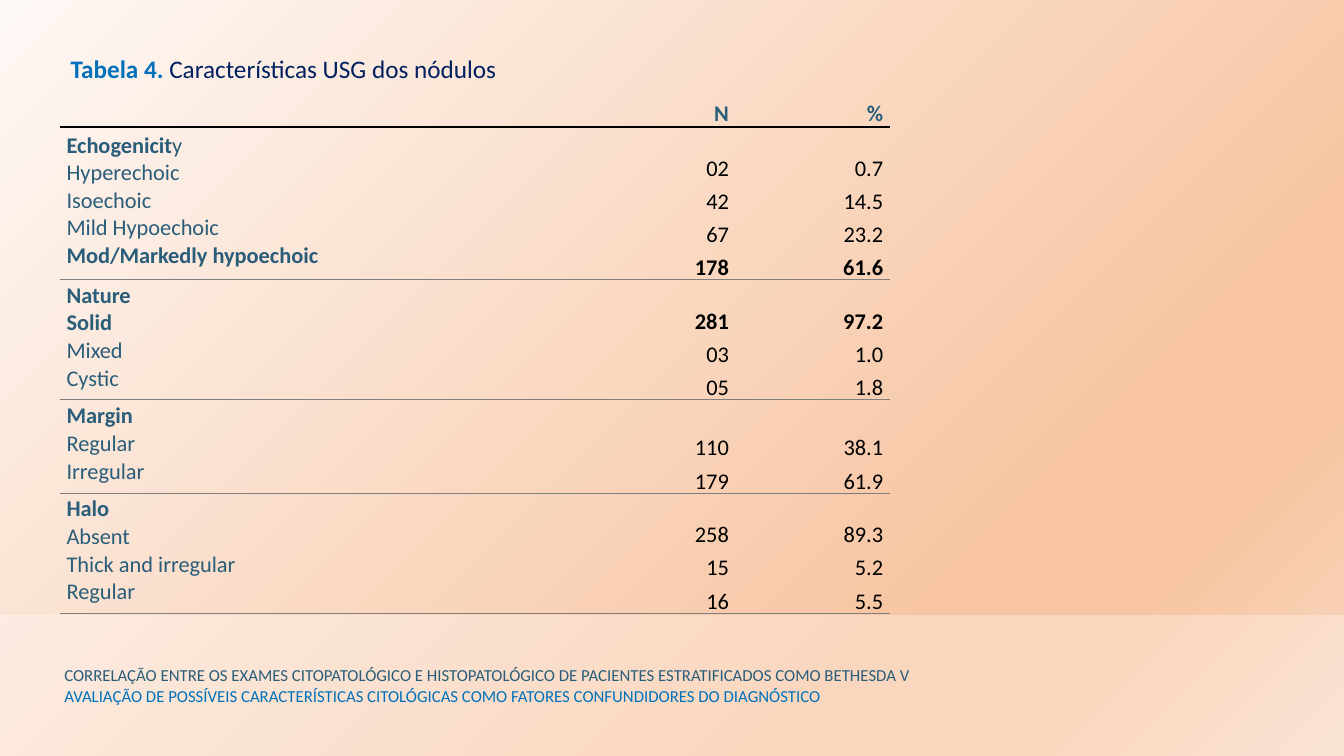
from dataclasses import dataclass
from lxml.etree import SubElement
from pptx import Presentation
from pptx.dml.color import RGBColor
from pptx.enum.shapes import MSO_SHAPE
from pptx.enum.text import MSO_ANCHOR, MSO_AUTO_SIZE, PP_ALIGN
from pptx.oxml.ns import qn
from pptx.util import Inches, Pt


@dataclass(frozen=True)
class Theme:
    face: str = "Calibri"
    teal: str = "295D7A"
    blue: str = "0071BA"
    navy: str = "002060"
    black: str = "000000"
    white: str = "FFFFFF"
    gray: str = "7F7F7F"
    glow: tuple = ((0, "FEF8F5"), (74, "F7C5A2"), (83, "F7C5A2"), (100, "FAD8C1"))
    head: int = 18
    cell: int = 16
    foot: int = 12


@dataclass(frozen=True)
class Run:
    text: str
    color: str
    bold: bool = False


@dataclass(frozen=True)
class Item:
    label: str
    count: str
    share: str
    bold: bool = False


@dataclass(frozen=True)
class Group:
    name: str
    high: float
    items: tuple
    tail: str = ""


THEME = Theme()
WIDE, HIGH = Inches(13.33), Inches(7.5)
COLS = (34.73, 15.6, 11.48)
TOP = 3.6
GROUPS = (
    Group("Echogenicit", 20.2, (
        Item("Hyperechoic", "02", "0.7"),
        Item("Isoechoic", "42", "14.5"),
        Item("Mild Hypoechoic", "67", "23.2"),
        Item("Mod/Markedly hypoechoic", "178", "61.6", True)), "y"),
    Group("Nature", 15.87, (
        Item("Solid", "281", "97.2", True),
        Item("Mixed", "03", "1.0"),
        Item("Cystic", "05", "1.8"))),
    Group("Margin", 12.4, (
        Item("Regular", "110", "38.1"),
        Item("Irregular", "179", "61.9"))),
    Group("Halo", 15.87, (
        Item("Absent", "258", "89.3"),
        Item("Thick and irregular", "15", "5.2"),
        Item("Regular", "16", "5.5"))),
)


def across(share: float) -> int:
    return round(WIDE * share / 100)


def down(share: float) -> int:
    return round(HIGH * share / 100)


def area(left: float, top: float, wide: float, high: float) -> tuple:
    return across(left), down(top), across(wide), down(high)


def write(frame, lines: list, size: int, align=PP_ALIGN.LEFT, pitch=None, gap=0) -> None:
    for spot, runs in enumerate(lines):
        par = frame.paragraphs[0] if spot == 0 else frame.add_paragraph()
        par.alignment = align
        if pitch:
            par.line_spacing = pitch
        par.space_before = Pt(gap if spot else 0)
        par.space_after = Pt(gap if spot < len(lines) - 1 else 0)
        par.font.name, par.font.size = THEME.face, Pt(size)
        for part in runs:
            run = par.add_run()
            run.text = part.text
            font = par.font if len(runs) == 1 else run.font
            font.bold = part.bold
            font.color.rgb = RGBColor.from_string(part.color)


def paint(slide) -> None:
    fill = slide.background.fill
    fill.gradient()
    fill.gradient_angle = 315
    stops = fill.gradient_stops[0]._gs.getparent()
    for stop in list(stops):
        stops.remove(stop)
    for place, color in THEME.glow:
        stop = SubElement(stops, qn("a:gs"), pos=str(place * 1000))
        SubElement(stop, qn("a:srgbClr"), val=color)


def band(slide) -> None:
    shape = slide.shapes.add_shape(MSO_SHAPE.RECTANGLE, *area(0, 81.33, 100, 18.67))
    shape.shadow.inherit = False
    shape.line.fill.background()
    shape.fill.solid()
    shape.fill.fore_color.rgb = RGBColor.from_string(THEME.white)
    tint = shape.fill._xPr.find(".//" + qn("a:srgbClr"))
    SubElement(tint, qn("a:alpha"), val="30000")


def rule(cell, side: str, color: str, width: float) -> None:
    line = SubElement(cell._tc.get_or_add_tcPr(), qn("a:" + side), w=str(Pt(width)))
    fill = SubElement(line, qn("a:solidFill"))
    SubElement(fill, qn("a:srgbClr"), val=color)


def edge(cell, row: int) -> None:
    dark, soft = (THEME.black, 1.5), (THEME.gray, 1)
    if row:
        rule(cell, "lnT", *(dark if row == 1 else soft))
    rule(cell, "lnB", *(soft if row else dark))
    cell.fill.background()
    cell.margin_left = cell.margin_right = Inches(0.07)
    cell.margin_top = cell.margin_bottom = 0


def names(cell, group: Group) -> None:
    head = [Run(group.name, THEME.teal, True)]
    if group.tail:
        head.append(Run(group.tail, THEME.teal))
    rest = [[Run(item.label, THEME.teal, item.bold)] for item in group.items]
    cell.vertical_anchor = MSO_ANCHOR.MIDDLE
    write(cell.text_frame, [head, *rest], THEME.cell, pitch=0.6, gap=4)


def counts(cell, group: Group, field: str) -> None:
    lines = [[Run(getattr(item, field), THEME.black, item.bold)] for item in group.items]
    cell.vertical_anchor = MSO_ANCHOR.BOTTOM
    write(cell.text_frame, lines, THEME.cell, PP_ALIGN.RIGHT, 0.8, 4)


def chart(slide) -> None:
    highs = (TOP, *(group.high for group in GROUPS))
    place = area(4.43, 13.2, sum(COLS), sum(highs))
    table = slide.shapes.add_table(len(highs), len(COLS), *place).table
    table.first_row = table.horz_banding = False
    style = table._tbl.tblPr.find(qn("a:tableStyleId"))
    style.text = "{2D5ABB26-0587-4C30-8999-92F81FD0307C}"
    for col, share in zip(table.columns, COLS):
        col.width = across(share)
    for row, share in enumerate(highs):
        table.rows[row].height = down(share)
        for cell in table.rows[row].cells:
            edge(cell, row)
    for col, text in enumerate(("N", "%"), 1):
        cell = table.cell(0, col)
        cell.vertical_anchor = MSO_ANCHOR.MIDDLE
        write(cell.text_frame, [[Run(text, THEME.teal, True)]], THEME.cell, PP_ALIGN.RIGHT)
    blank = table.cell(0, 0).text_frame.paragraphs[0]
    blank.font.size = Pt(THEME.foot)
    for row, group in enumerate(GROUPS, 1):
        names(table.cell(row, 0), group)
        counts(table.cell(row, 1), group, "count")
        counts(table.cell(row, 2), group, "share")


def title(slide) -> None:
    shape = slide.shapes.title
    shape.left, shape.top, shape.width, shape.height = area(4.5, 6.4, 82.52, 5.33)
    frame = shape.text_frame
    frame.word_wrap = True
    frame.auto_size = MSO_AUTO_SIZE.NONE
    frame.vertical_anchor = MSO_ANCHOR.MIDDLE
    runs = [Run("Tabela 4. ", THEME.blue, True), Run("Características USG dos nódulos", THEME.navy)]
    write(frame, [runs], THEME.head)


def footer(slide) -> None:
    frame = slide.shapes.add_textbox(*area(4.05, 87.33, 67.67, 6.67)).text_frame
    frame.word_wrap = True
    write(frame, [
        [Run("CORRELAÇÃO ENTRE OS EXAMES CITOPATOLÓGICO E HISTOPATOLÓGICO DE PACIENTES ESTRATIFICADOS COMO BETHESDA V", THEME.teal)],
        [Run("AVALIAÇÃO DE POSSÍVEIS CARACTERÍSTICAS CITOLÓGICAS COMO FATORES CONFUNDIDORES DO DIAGNÓSTICO", THEME.blue)],
    ], THEME.foot)


def main() -> None:
    deck = Presentation()
    deck.slide_width, deck.slide_height = WIDE, HIGH
    slide = deck.slides.add_slide(deck.slide_layouts[5])
    for draw in (paint, band, footer, chart, title):
        draw(slide)
    deck.save("out.pptx")


if __name__ == "__main__":
    main()
